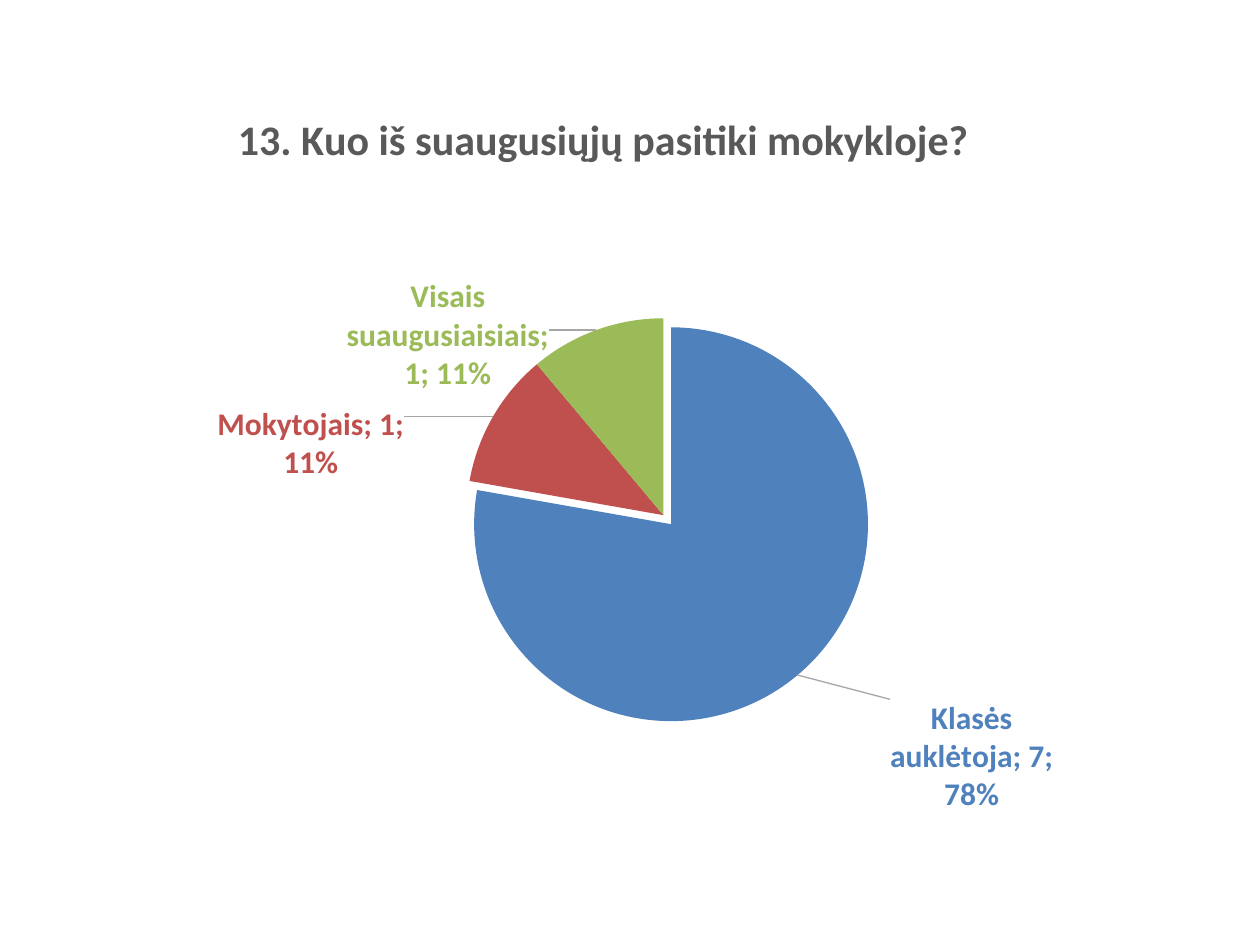
from lxml import etree
from pptx import Presentation
from pptx import util as u
from pptx.chart.data import CategoryChartData
from pptx.dml.color import RGBColor
from pptx.enum import chart as ch
from pptx.oxml import parse_xml
from pptx.oxml.ns import nsdecls, qn

TITLE = "13. Kuo iš suaugusiųjų pasitiki mokykloje?"
# answer, count, colour, explosion in %, label offset in % of the chart
ANSWERS = [
    ("Klasės auklėtoja", 7, "4F81BD", 6, (8.05, 2.5)),
    ("Mokytojais", 1, "C0504D", 0, (-7.55, 9.25)),
    ("Visais suaugusiaisiais", 1, "9BBB59", 0, (-4.1, 9.25)),
]
THEME = {"font": "Calibri", "title": "595959", "leader": "A6A6A6",
         "base_size": 10, "label_size": 18, "title_size": 24}
SLIDE = (10, 7.5)
CHART = (0.75, 0.68, 8.66, 5.91)
# left, top and size in % of the chart
TITLE_AT = (12.45, 2.4)
PIE_AT = (34.1, 31.2, 36.1, 53)


def style(font, size, color, bold=True):
    font.name, font.size, font.bold = THEME["font"], u.Pt(size), bold
    font.color.rgb = RGBColor.from_string(color)


def layout(place, target=None, edge=True):
    """Manual layout from x, y and optionally w, h, in % of the chart."""
    parts = [f'<c:layoutTarget val="{target}"/>'] if target else []
    if edge:
        parts += [f'<c:{k}Mode val="edge"/>' for k in "xy"]
    parts += [f'<c:{k} val="{v / 100}"/>' for k, v in zip("xywh", place)]
    return parse_xml(f'<c:layout {nsdecls("c")}><c:manualLayout>'
                     f'{"".join(parts)}</c:manualLayout></c:layout>')


def set_layout(parent, new, after=None):
    for old in parent.findall(qn("c:layout")):
        parent.remove(old)
    if after is None:
        parent.insert(0, new)
    else:
        parent.find(qn(after)).addnext(new)


def add_separator(labels):
    sep = etree.Element(qn("c:separator"))
    sep.text = "; "
    labels.find(qn("c:showBubbleSize")).addnext(sep)


def show_parts(labels):
    for part in ("showVal", "showCatName", "showPercent"):
        labels.find(qn(f"c:{part}")).set("val", "1")


def format_labels(series):
    labels = series.data_labels
    style(labels.font, THEME["label_size"], ANSWERS[0][2])
    labels.show_value = labels.show_category_name = labels.show_percentage = True
    labels.position = ch.XL_LABEL_POSITION.OUTSIDE_END
    labels.show_legend_key = labels.show_series_name = False
    box = series._element.find(qn("c:dLbls"))
    for tag in ("c:showLeaderLines", "c:leaderLines"):
        for old in box.findall(qn(tag)):
            box.remove(old)
    etree.SubElement(box, qn("c:showLeaderLines")).set("val", "1")
    box.append(parse_xml(
        f'<c:leaderLines {nsdecls("c", "a")}><c:spPr><a:ln w="9525"><a:solidFill>'
        f'<a:srgbClr val="{THEME["leader"]}"/></a:solidFill></a:ln></c:spPr></c:leaderLines>'))

    for i, (_, _, color, explosion, offset) in enumerate(ANSWERS):
        point = series.points[i]
        point.format.fill.solid()
        point.format.fill.fore_color.rgb = RGBColor.from_string(color)
        if explosion:
            burst = etree.Element(qn("c:explosion"))
            burst.set("val", str(explosion))
            series._element.findall(qn("c:dPt"))[i].find(qn("c:spPr")).addprevious(burst)
        label = point.data_label
        style(label.font, THEME["label_size"], color)
        label.position = ch.XL_LABEL_POSITION.OUTSIDE_END
        item = box.findall(qn("c:dLbl"))[i]
        show_parts(item)
        add_separator(item)
        set_layout(item, layout(offset, edge=False), after="c:idx")


def add_pie(slide):
    data = CategoryChartData()
    data.categories = [a[0] for a in ANSWERS]
    data.add_series(TITLE, [a[1] for a in ANSWERS])
    chart = slide.shapes.add_chart(ch.XL_CHART_TYPE.PIE, *map(u.Inches, CHART), data).chart
    style(chart.font, THEME["base_size"], "000000", bold=False)
    chart.has_legend = False
    chart.has_title = True
    tf = chart.chart_title.text_frame
    tf.text = TITLE
    style(tf.paragraphs[0].runs[0].font, THEME["title_size"], THEME["title"])
    set_layout(chart.chart_title._element, layout(TITLE_AT), after="c:tx")
    plot = chart.plots[0]
    plot.vary_by_categories = True
    format_labels(plot.series[0])
    set_layout(chart._chartSpace.chart.plotArea, layout(PIE_AT, "inner"))


def main():
    prs = Presentation()
    prs.slide_width, prs.slide_height = map(u.Inches, SLIDE)
    add_pie(prs.slides.add_slide(prs.slide_layouts[6]))
    prs.save("out.pptx")


if __name__ == "__main__":
    main()
